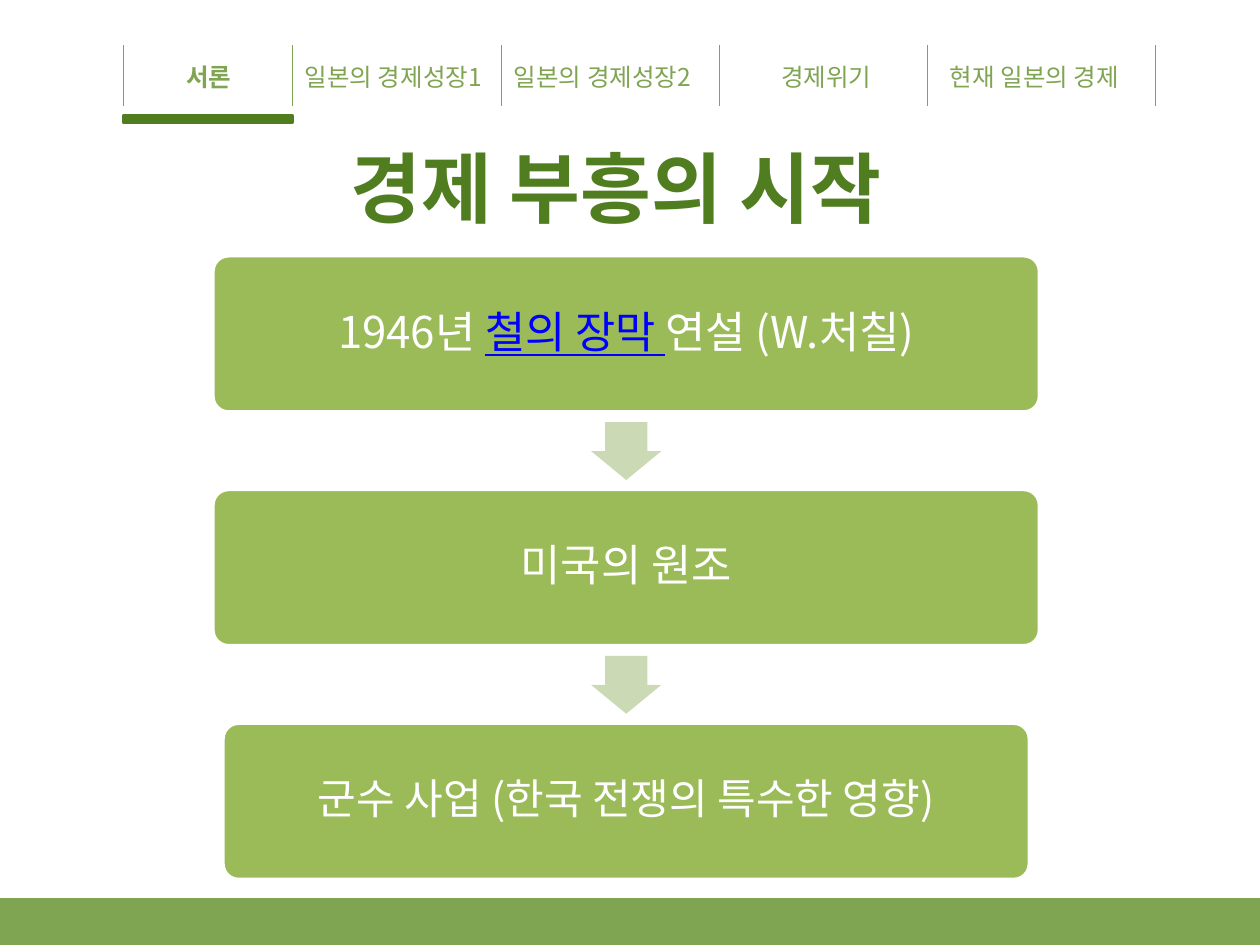
import pptx
import pptx.util
import pptx.dml.color
import pptx.enum.shapes
import pptx.enum.text
import pptx.oxml.ns
import lxml.etree

Inches = pptx.util.Inches
Pt = pptx.util.Pt
SHAPE = pptx.enum.shapes.MSO_SHAPE
ALIGN = pptx.enum.text.PP_ALIGN
ANCHOR = pptx.enum.text.MSO_ANCHOR
qn = pptx.oxml.ns.qn
FONT = "Noto Sans CJK KR"
GREEN, DARK, WHITE = "7FA452", "517D21", "FFFFFF"


def rgb(code):
    return pptx.dml.color.RGBColor.from_string(code)


def style(para, size, color, bold=False):
    font = para.font
    font.name, font.size, font.bold = FONT, Pt(size), bold
    font.color.rgb = rgb(color)
    # Hangul takes the East Asian typeface
    props = para._p.get_or_add_pPr().find(qn("a:defRPr"))
    lxml.etree.SubElement(props, qn("a:ea"), typeface=FONT)


deck = pptx.Presentation()
deck.slide_width, deck.slide_height = Inches(10), Inches(7.5)
slide = deck.slides.add_slide(deck.slide_layouts[6])
shapes = slide.shapes

# Footer band and marker under the current tab
bars = [(0, 7.14, 10, 0.36, GREEN), (0.98, 0.92, 1.34, 0.05, DARK)]
for left, top, width, height, color in bars:
    bar = shapes.add_shape(SHAPE.RECTANGLE, Inches(left), Inches(top),
                           Inches(width), Inches(height))
    bar.shadow.inherit = False
    bar.fill.solid()
    bar.fill.fore_color.rgb = rgb(color)
    bar.line.color.rgb = rgb(color)
    bar.line.width = Pt(2)

# Tab dividers
for x in (0.98, 2.32, 3.98, 5.71, 7.36, 9.17):
    rule = shapes.add_connector(pptx.enum.shapes.MSO_CONNECTOR.STRAIGHT,
                                Inches(x), Inches(0.36), Inches(x), Inches(0.84))
    rule.line.color.rgb = rgb(GREEN)
    rule.line.width = Pt(0.75)
    lxml.etree.SubElement(rule._element.spPr, qn("a:effectLst"))

# Tab labels, the current one bold
tabs = [
    ("서론", 1.38, 0.59),
    ("일본의 경제성장1", 2.32, 1.76),
    ("일본의 경제성장2", 3.98, 1.76),
    ("경제위기", 6.1, 0.99),
    ("현재 일본의 경제", 7.44, 1.71),
]
for i, (label, left, width) in enumerate(tabs):
    box = shapes.add_textbox(Inches(left), Inches(0.44), Inches(width), Inches(0.34))
    frame = box.text_frame
    frame.word_wrap = False
    frame.auto_size = pptx.enum.text.MSO_AUTO_SIZE.SHAPE_TO_FIT_TEXT
    frame.text = label
    style(frame.paragraphs[0], 14, GREEN, bold=i == 0)

# Title
title = shapes.add_textbox(Inches(0.39), Inches(0.86), Inches(9), Inches(1.25))
frame = title.text_frame
frame.word_wrap = True
frame.vertical_anchor = ANCHOR.MIDDLE
frame.text = "경제 부흥의 시작"
para = frame.paragraphs[0]
para.alignment = ALIGN.CENTER
style(para, 44, DARK, bold=True)

# Process steps, joined by down-pointing arrows
mid, first, pitch = 4.97, 2.03, 1.855
steps = [
    (["1946년 ", "철의 장막 ", "연설 (W.처칠)"], 6.56, 25),
    (["미국의 원조"], 6.56, 25),
    (["군수 사업 (한국 전쟁의 특수한 영향)"], 6.4, 24),
]
for i, (parts, width, size) in enumerate(steps):
    top = first + i * pitch
    step = shapes.add_shape(SHAPE.ROUNDED_RECTANGLE, Inches(mid - width / 2),
                            Inches(top), Inches(width), Inches(1.24))
    step.adjustments[0] = 0.1
    step.shadow.inherit = False
    step.fill.solid()
    step.fill.fore_color.rgb = rgb("9BBB59")
    step.line.color.rgb = rgb(WHITE)
    step.line.width = Pt(2)

    frame = step.text_frame
    frame.word_wrap = True
    frame.vertical_anchor = ANCHOR.MIDDLE
    para = frame.paragraphs[0]
    para.alignment = ALIGN.CENTER
    para.line_spacing = 0.9
    style(para, size, WHITE)
    for j, part in enumerate(parts):
        run = para.add_run()
        run.text = part
        if j == 1:
            run.font.color.rgb = rgb("0000FF")
            run.font.underline = True

    if i < len(steps) - 1:
        arrow = shapes.add_shape(SHAPE.RIGHT_ARROW, Inches(mid - 0.23),
                                 Inches(top + 1.27), Inches(0.46), Inches(0.56))
        arrow.rotation = 90
        arrow.adjustments[0] = 0.6
        arrow.adjustments[1] = 0.5
        arrow.shadow.inherit = False
        arrow.fill.solid()
        arrow.fill.fore_color.rgb = rgb("CBDAB5")
        arrow.line.fill.background()

deck.save("out.pptx")
